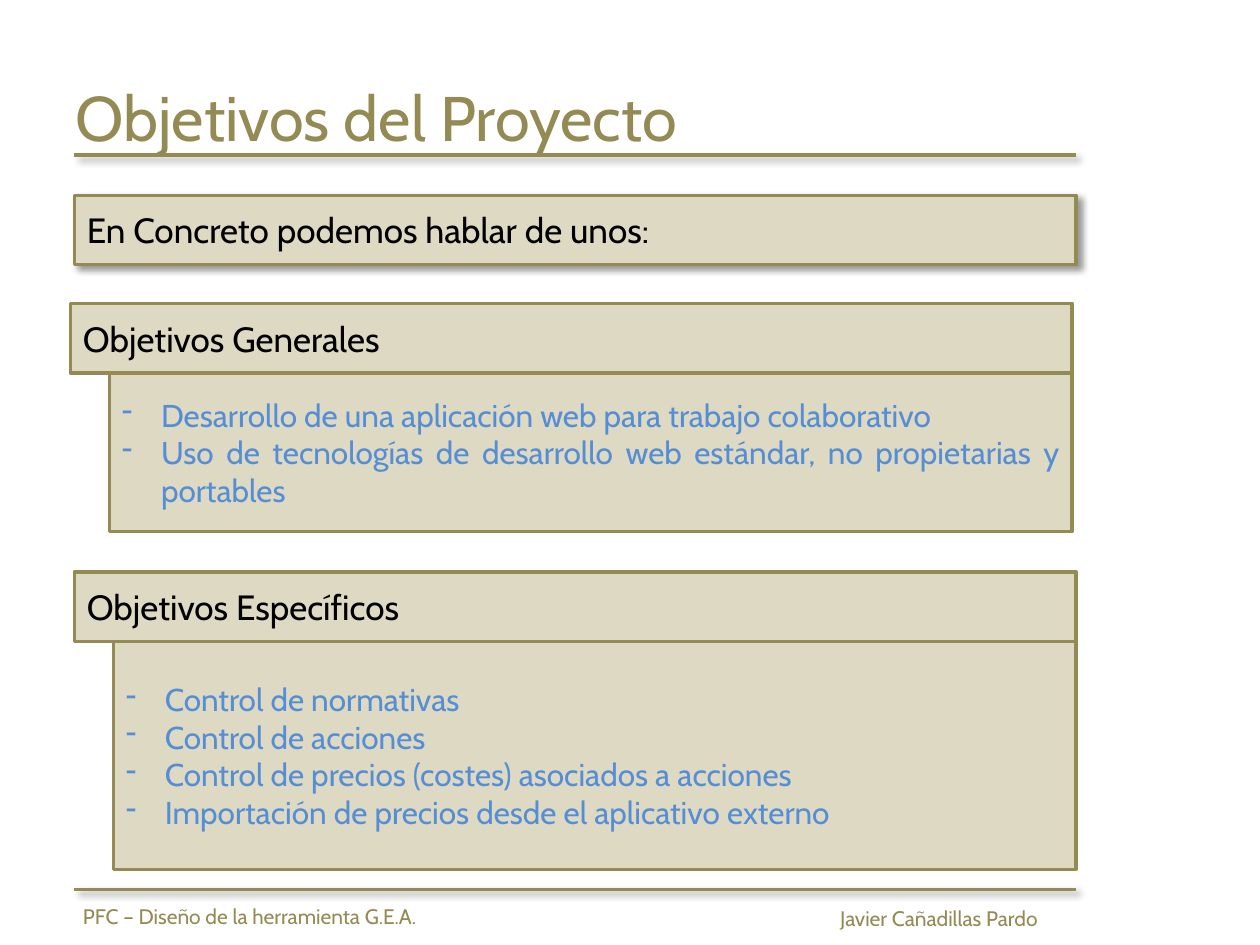
from lxml import etree
from pptx import Presentation
from pptx.dml.color import RGBColor
from pptx.enum.shapes import MSO_CONNECTOR, MSO_SHAPE
from pptx.enum.text import MSO_ANCHOR, MSO_AUTO_SIZE, PP_ALIGN
from pptx.oxml import parse_xml
from pptx.oxml.ns import nsdecls, qn
from pptx.util import Inches, Pt

LEFT, JUSTIFY = PP_ALIGN.LEFT, PP_ALIGN.JUSTIFY
MIDDLE = MSO_ANCHOR.MIDDLE
FIT_SHAPE = MSO_AUTO_SIZE.SHAPE_TO_FIT_TEXT
RECTANGLE, STRAIGHT = MSO_SHAPE.RECTANGLE, MSO_CONNECTOR.STRAIGHT

# Content
TITLE = "Objetivos del Proyecto"
INTRO = "En Concreto podemos hablar de unos:"
SECTIONS = [  # left, top, body height, heading, goals
    (0.56, 2.41, 1.26, "Objetivos Generales", [
        "Desarrollo de una aplicación web para trabajo colaborativo",
        "Uso de tecnologías de desarrollo web estándar, no propietarias y portables",
    ]),
    (0.59, 4.54, 1.81, "Objetivos Específicos", [
        "Control de normativas",
        "Control de acciones",
        "Control de precios (costes) asociados a acciones",
        "Importación de precios desde el aplicativo externo",
    ]),
]
FOOTERS = [  # left, top, width, text
    (0.56, 7.12, 3.03, "PFC – Diseño de la herramienta G.E.A."),
    (6.57, 7.14, 1.94, "Javier Cañadillas Pardo"),
]

# Style and layout, in inches
COLORS = {"olive": "948A54", "sand": "DDD9C3", "blue": "558ED5", "black": "000000"}
FONT = "Cabin"
MARGIN, WIDTH, HEADING_HEIGHT = 0.59, 7.95, 0.55
BODY_INDENT, BULLET_INDENT = 0.31, 0.31
RULE_TOPS = (1.23, 7.06)


def color(name):
    return RGBColor.from_string(COLORS[name])


def set_shadow(shape, visible):
    properties = shape._element.spPr
    effects = parse_xml(f"<a:effectLst {nsdecls('a')}/>")
    if visible:
        outer = etree.SubElement(effects, qn("a:outerShdw"), blurRad=str(Pt(4)),
                                 dist=str(Pt(3)), dir=str(45 * 60000))
        black = etree.SubElement(outer, qn("a:srgbClr"), val=COLORS["black"])
        etree.SubElement(black, qn("a:alpha"), val="40000")
    properties.append(effects)


def write(frame, lines, size, color_name, align=LEFT):
    for index, line in enumerate(lines):
        paragraph = frame.paragraphs[0] if index == 0 else frame.add_paragraph()
        paragraph.text = line
        paragraph.alignment = align
        paragraph.font.name = FONT
        paragraph.font.size = Pt(size)
        paragraph.font.color.rgb = color(color_name)


def add_bullets(frame):
    for paragraph in frame.paragraphs:
        properties = paragraph._p.get_or_add_pPr()
        properties.set("marL", str(Inches(BULLET_INDENT)))
        properties.set("indent", str(-Inches(BULLET_INDENT)))
        bullet = parse_xml(f'<a:buChar {nsdecls("a")} char="-"/>')
        properties.insert_element_before(bullet, "a:tabLst", "a:defRPr", "a:extLst")


def add_box(slide, left, top, width, height, shadow=False):
    box = slide.shapes.add_shape(RECTANGLE, Inches(left), Inches(top),
                                 Inches(width), Inches(height))
    box.fill.solid()
    box.fill.fore_color.rgb = color("sand")
    box.line.color.rgb = color("olive")
    box.line.width = Pt(2)
    set_shadow(box, shadow)
    box.text_frame.word_wrap = True
    box.text_frame.vertical_anchor = MIDDLE
    return box


def add_heading(slide, left, top, text, shadow=False):
    box = add_box(slide, left, top, WIDTH, HEADING_HEIGHT, shadow)
    write(box.text_frame, [text], 20, "black")


def add_rule(slide, top):
    rule = slide.shapes.add_connector(STRAIGHT, Inches(MARGIN), Inches(top),
                                      Inches(MARGIN + WIDTH), Inches(top))
    rule.line.color.rgb = color("olive")
    rule.line.width = Pt(1.75)
    set_shadow(rule, True)


def main():
    presentation = Presentation()
    presentation.slide_width, presentation.slide_height = Inches(10), Inches(7.5)
    slide = presentation.slides.add_slide(presentation.slide_layouts[5])

    # Title
    title = slide.shapes.title
    title.left, title.top = Inches(0.5), Inches(0.3)
    title.width, title.height = Inches(9), Inches(1.25)
    title.text_frame.vertical_anchor = MIDDLE
    write(title.text_frame, [TITLE], 36, "olive")

    # Rules under the title and above the footer
    for top in RULE_TOPS:
        add_rule(slide, top)

    # Headings, each section with its goals below
    add_heading(slide, MARGIN, 1.55, INTRO, shadow=True)
    for left, top, height, heading, goals in SECTIONS:
        add_heading(slide, left, top, heading)
        body = add_box(slide, left + BODY_INDENT, top + HEADING_HEIGHT,
                       WIDTH - BODY_INDENT, height)
        write(body.text_frame, goals, 18, "blue", JUSTIFY)
        add_bullets(body.text_frame)

    # Footer
    for left, top, width, text in FOOTERS:
        footer = slide.shapes.add_textbox(Inches(left), Inches(top),
                                          Inches(width), Inches(0.3))
        footer.text_frame.word_wrap = False
        footer.text_frame.auto_size = FIT_SHAPE
        write(footer.text_frame, [text], 12, "olive")

    presentation.save("out.pptx")


if __name__ == "__main__":
    main()
